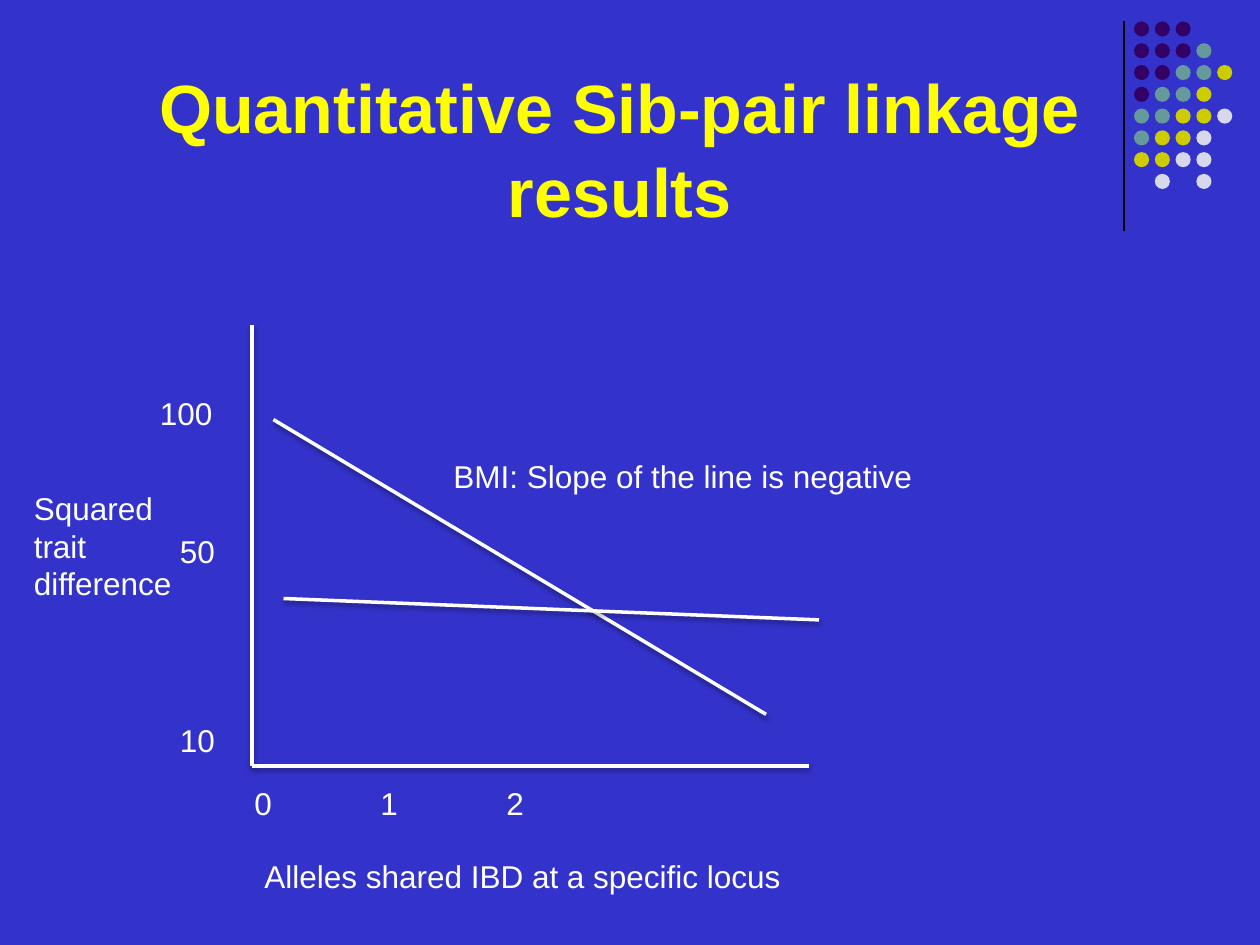
"""Build the slide on quantitative sib-pair linkage results."""
from dataclasses import dataclass

from lxml.etree import SubElement
from pptx import Presentation
from pptx.dml.color import RGBColor
from pptx.enum.shapes import MSO_CONNECTOR as Link, MSO_SHAPE as Shape
from pptx.enum.text import MSO_ANCHOR as Anchor, PP_ALIGN as Align
from pptx.oxml.ns import qn
from pptx.util import Inches, Pt

BACKGROUND, WHITE, YELLOW, BLACK = "3333CC", "FFFFFF", "FFFF00", "000000"
DOT_COLOURS = {"P": "330066", "T": "669999", "Y": "CCCC00", "W": "D8D8EC"}
DOT_ROWS = ["PPP", "PPPT", "PPTTY", "PTTY", "TTYYW", "TYYW", "YYWW", " W W"]
DOT_LEFT, DOT_TOP, DOT_SIZE = 9, 0.17, 0.12
COLUMN_STEP, ROW_STEP = 0.66 / 4, 1.21 / 7


@dataclass
class Label:
    text: str
    left: float
    top: float
    width: float
    height: float = 0.4
    wrap: bool = False
    size: float = 18
    colour: str = WHITE
    bold: bool = False
    align: Align = Align.LEFT
    spacing: float = 1.0


@dataclass
class Line:
    start: tuple[float, float]
    end: tuple[float, float]
    colour: str = WHITE
    width: float = 2
    shadow: bool = True


ORIGIN = (2, 6.08)
LINES = [
    Line((8.92, 0.17), (8.92, 1.83), BLACK, 0.75, False),
    Line((2, 2.58), ORIGIN),
    Line((2.17, 3.33), (6.08, 5.67)),
    Line((6.42, 6.08), ORIGIN),
    Line((2.25, 4.75), (6.5, 4.92)),
]
LABELS = [
    Label("Quantitative Sib-pair linkage results", 0.67, 0.45, 8.5, 1.4,
          True, 39, YELLOW, True, Align.CENTER, 1.03),
    Label("Alleles shared IBD at a specific locus", 2, 6.75, 4.34),
    Label("0\t\t1\t\t2", 1.92, 6.17, 4.38),
    Label("Squared trait difference", 0.17, 3.83, 1.5, 1.01, True),
    Label("100", 1.17, 3.08, 0.62),
    Label("10", 1.33, 5.67, 0.48),
    Label("50", 1.33, 4.17, 0.48),
    Label("BMI: Slope of the line is negative", 3.5, 3.58, 3.95),
]


def rgb(colour: str) -> RGBColor:
    return RGBColor.from_string(colour)


def draw_dots(shapes) -> None:
    for row, pattern in enumerate(DOT_ROWS):
        for column, key in enumerate(pattern):
            if key == " ":
                continue
            dot = shapes.add_shape(
                Shape.OVAL,
                Inches(DOT_LEFT + column * COLUMN_STEP),
                Inches(DOT_TOP + row * ROW_STEP),
                Inches(DOT_SIZE), Inches(DOT_SIZE))
            dot.shadow.inherit = False
            dot.fill.solid()
            dot.fill.fore_color.rgb = rgb(DOT_COLOURS[key])
            dot.line.fill.background()


def draw_line(shapes, line: Line) -> None:
    ends = [Inches(value) for value in (*line.start, *line.end)]
    connector = shapes.add_connector(Link.STRAIGHT, *ends)
    connector.line.color.rgb = rgb(line.colour)
    connector.line.width = Pt(line.width)
    effects = SubElement(connector._element.spPr, qn("a:effectLst"))
    if line.shadow:
        shadow = SubElement(effects, qn("a:outerShdw"), blurRad=str(Pt(3.1)),
                            dist=str(Pt(1.6)), dir="5400000", rotWithShape="0")
        black = SubElement(shadow, qn("a:srgbClr"), val=BLACK)
        SubElement(black, qn("a:alpha"), val="38000")


def write_label(shapes, label: Label) -> None:
    place = (label.left, label.top, label.width, label.height)
    frame = shapes.add_textbox(*map(Inches, place)).text_frame
    frame.word_wrap = label.wrap
    frame.vertical_anchor = Anchor.TOP
    paragraph = frame.paragraphs[0]
    paragraph.alignment = label.align
    paragraph.line_spacing = label.spacing
    run = paragraph.add_run()
    run.text = label.text
    style = {"name": "Arial", "size": Pt(label.size), "bold": label.bold}
    for attribute, value in style.items():
        setattr(run.font, attribute, value)
    run.font.color.rgb = rgb(label.colour)


def main() -> None:
    deck = Presentation()
    deck.slide_width, deck.slide_height = Inches(10), Inches(7.5)
    slide = deck.slides.add_slide(deck.slide_layouts[6])
    slide.background.fill.solid()
    slide.background.fill.fore_color.rgb = rgb(BACKGROUND)
    draw_dots(slide.shapes)
    for line in LINES:
        draw_line(slide.shapes, line)
    for label in LABELS:
        write_label(slide.shapes, label)
    deck.save("out.pptx")


if __name__ == "__main__":
    main()
